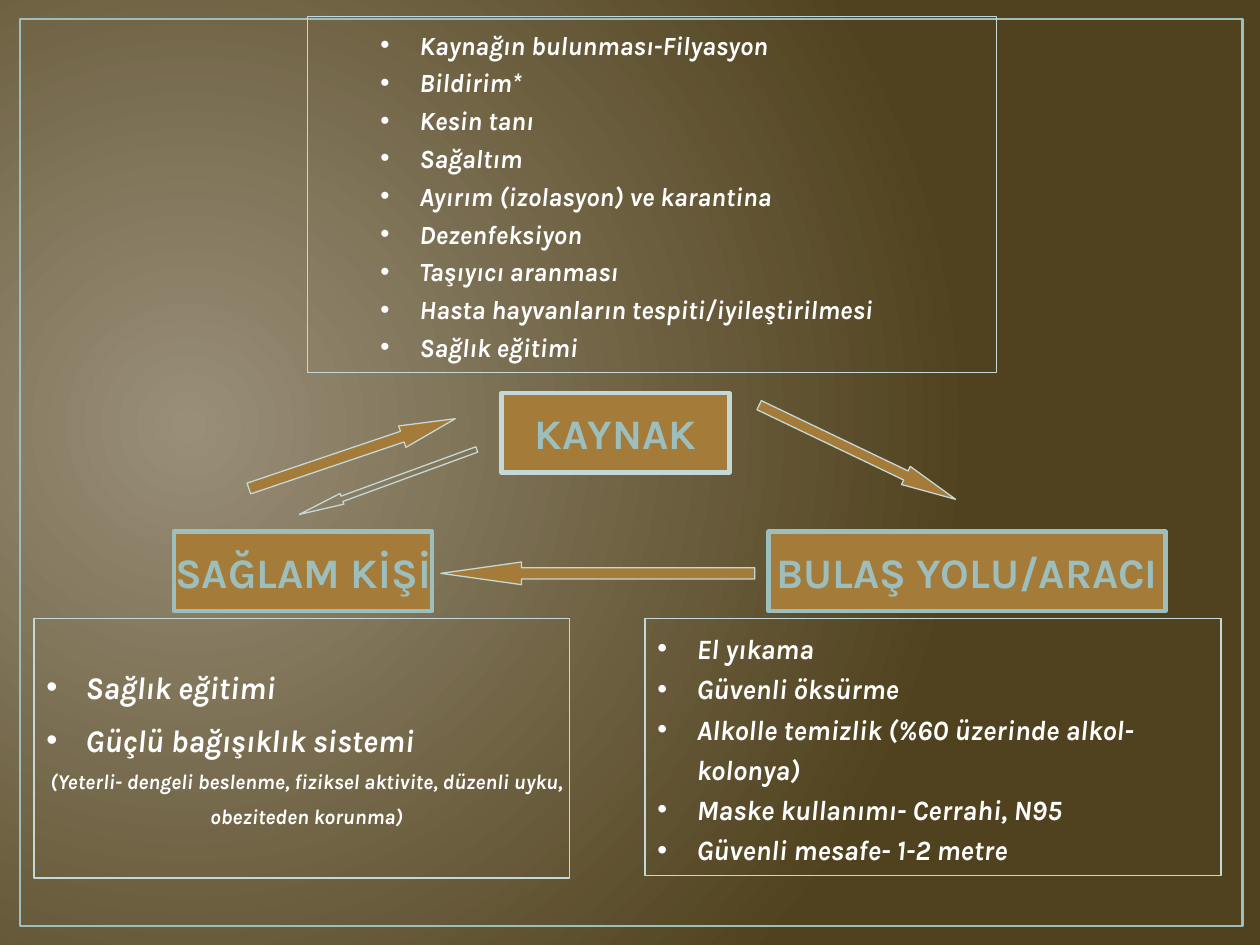
import pptx
import pptx.dml.color
import pptx.enum.shapes
import pptx.enum.text
import pptx.oxml.ns
import pptx.util
from lxml import etree
from pptx.util import Inches

COLORS = {
    "glow": "998E77",
    "earth": "50421E",
    "amber": "A47B38",
    "teal": "9CBEBD",
    "mist": "C4D8D7",
    "white": "FFFFFF",
}
FONT = "Karla"
SHAPES = pptx.enum.shapes.MSO_SHAPE
ALIGN = pptx.enum.text.PP_ALIGN
ANCHOR = pptx.enum.text.MSO_ANCHOR

SOURCE_MEASURES = [
    "Kaynağın bulunması-Filyasyon",
    "Bildirim*",
    "Kesin tanı",
    "Sağaltım",
    "Ayırım (izolasyon) ve karantina",
    "Dezenfeksiyon",
    "Taşıyıcı aranması",
    "Hasta hayvanların tespiti/iyileştirilmesi",
    "Sağlık eğitimi",
]
HOST_MEASURES = ["Sağlık eğitimi", "Güçlü bağışıklık sistemi"]
HOST_NOTE = (
    "(Yeterli- dengeli beslenme, fiziksel aktivite, düzenli uyku, "
    "obeziteden korunma)"
)
ROUTE_MEASURES = [
    "El yıkama",
    "Güvenli öksürme",
    "Alkolle temizlik (%60 üzerinde alkol- kolonya)",
    "Maske kullanımı- Cerrahi, N95",
    "Güvenli mesafe- 1-2 metre",
]


def rgb(name):
    """Return the named palette colour."""
    return pptx.dml.color.RGBColor.from_string(COLORS[name])


def paint_background(page):
    """Fill the page with a circular gradient centred on the left."""
    fill = page.background.fill
    fill.gradient()
    for stop, name in zip(fill.gradient_stops, ("glow", "earth")):
        stop.color.rgb = rgb(name)
    qn = pptx.oxml.ns.qn
    gradient = page.background._cSld.find(".//" + qn("a:gradFill"))
    linear = gradient.find(qn("a:lin"))
    circle = etree.Element(qn("a:path"), path="circle")
    etree.SubElement(circle, qn("a:fillToRect"), l="15000", t="50000", r="85000", b="60000")
    gradient.replace(linear, circle)


def add_panel(page, box, kind=SHAPES.RECTANGLE, fill=None, line="mist", width=0.75):
    """Add an outlined shape in the box, filled if a colour is given."""
    panel = page.shapes.add_shape(kind, *(Inches(length) for length in box))
    panel.shadow.inherit = False
    if fill:
        panel.fill.solid()
        panel.fill.fore_color.rgb = rgb(fill)
    else:
        panel.fill.background()
    panel.line.color.rgb = rgb(line)
    panel.line.width = pptx.util.Pt(width)
    return panel


def add_text(frame, text, size, color="white", italic=True, align=ALIGN.LEFT,
             spacing=1.0, indent=None):
    """Write one bold paragraph, bulleted when an indent is given."""
    para = frame.paragraphs[0]
    if para.runs:
        para = frame.add_paragraph()
    para.alignment = align
    para.line_spacing = spacing
    if indent is not None:
        properties = para._p.get_or_add_pPr()
        properties.set("marL", str(Inches(indent)))
        properties.set("indent", str(-Inches(0.31)))
        etree.SubElement(properties, pptx.oxml.ns.qn("a:buFont"), typeface="Arial")
        etree.SubElement(properties, pptx.oxml.ns.qn("a:buChar"), char="•")
    span = para.add_run()
    span.text = text
    span.font.name = FONT
    span.font.size = pptx.util.Pt(size)
    span.font.bold = True
    span.font.italic = italic
    span.font.color.rgb = rgb(color)


def add_stage(page, box, name, line="teal"):
    """Add a named stage of the infection chain."""
    frame = add_panel(page, box, fill="amber", line=line, width=2.5).text_frame
    frame.word_wrap = False
    frame.vertical_anchor = ANCHOR.MIDDLE
    add_text(frame, name, 24, color="teal", italic=False, align=ALIGN.CENTER)


def add_arrow(page, box, angle, head, fill="amber"):
    """Add a block arrow turned by the angle."""
    arrow = add_panel(page, box, SHAPES.RIGHT_ARROW, fill=fill, width=0)
    arrow.adjustments[0] = 0.5
    arrow.adjustments[1] = head
    arrow.rotation = angle


def add_measures(page, box, items, size, spacing=1.2, indent=0.31):
    """Add an outlined box with a bulleted list of measures."""
    fill_list(add_panel(page, box).text_frame, items, size, spacing, indent)


def fill_list(frame, items, size, spacing, indent):
    """Write the items as bullets from the top of the frame."""
    frame.word_wrap = True
    frame.vertical_anchor = ANCHOR.TOP
    for item in items:
        add_text(frame, item, size, spacing=spacing, indent=indent)


def add_host_measures(page, box):
    """Add the outlined box of host measures with its closing note."""
    left, top, width, height = box
    add_panel(page, box)
    inner = (left, top + 0.22, width + 0.08, height - 0.55)
    frame = page.shapes.add_textbox(*(Inches(length) for length in inner)).text_frame
    fill_list(frame, HOST_MEASURES, 18, 1.4, 0.31)
    add_text(frame, HOST_NOTE, 12, align=ALIGN.CENTER, spacing=1.4)


def add_chain(page):
    """Add the three stages and the arrows between them."""
    add_stage(page, (3.98, 3.12, 1.81, 0.63), "KAYNAK", line="mist")
    add_stage(page, (1.38, 4.22, 2.05, 0.63), "SAĞLAM KİŞİ")
    add_stage(page, (6.1, 4.22, 3.15, 0.63), "BULAŞ YOLU/ARACI")
    add_arrow(page, (5.94, 3.51, 1.73, 0.16), 25.6, 2.74)
    add_arrow(page, (3.5, 4.46, 2.49, 0.18), 180, 3.55)
    add_arrow(page, (1.93, 3.51, 1.73, 0.18), 341.3, 2.47)
    add_arrow(page, (2.33, 3.78, 1.5, 0.09), 159.9, 3.99, fill=None)


def main():
    """Build the slide and save the deck."""
    deck = pptx.Presentation()
    deck.slide_width = Inches(10)
    deck.slide_height = Inches(7.5)
    page = deck.slides.add_slide(deck.slide_layouts[6])
    paint_background(page)
    add_panel(page, (0.16, 0.15, 9.7, 7.2), line="teal", width=1.5)
    add_chain(page)
    add_measures(page, (2.44, 0.13, 5.47, 2.83), SOURCE_MEASURES, 15, indent=0.79)
    add_host_measures(page, (0.27, 4.91, 4.25, 2.06))
    add_measures(page, (5.12, 4.91, 4.57, 2.04), ROUTE_MEASURES, 16)
    deck.save("out.pptx")


if __name__ == "__main__":
    main()
